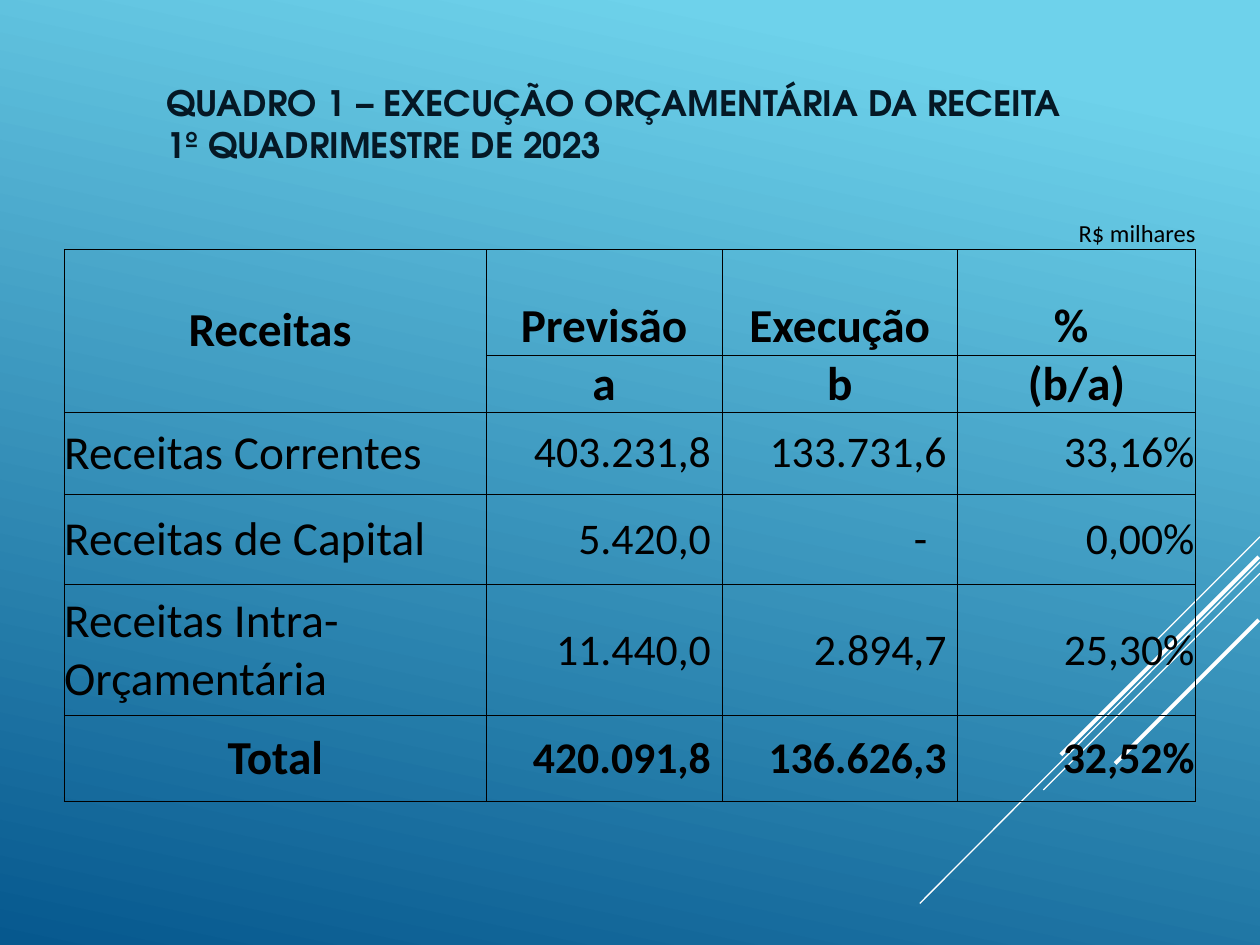
from dataclasses import dataclass

from lxml.etree import SubElement
from pptx import Presentation
from pptx.dml.color import RGBColor
from pptx.enum.shapes import MSO_CONNECTOR
from pptx.enum.text import MSO_ANCHOR, PP_ALIGN
from pptx.oxml import parse_xml
from pptx.oxml.ns import nsdecls, qn
from pptx.util import Inches, Pt


@dataclass(frozen=True)
class Theme:
    sky: str = "6ED2EB"
    deep: str = "06588E"
    title_ink: str = "051825"
    ink: str = "000000"
    streak: str = "FFFFFF"
    title_font: str = "TeX Gyre Adventor"
    body_font: str = "Calibri"
    title_size: float = 20
    unit_size: float = 14
    label_size: float = 27
    value_size: float = 25
    border_width: float = 0.5


def set_all(target, values):
    for name, value in values.items():
        setattr(target, name, value)


class SlideBuilder:
    def __init__(self, slide, theme):
        self.slide = slide
        self.theme = theme

    def background(self):
        fill = self.slide.background.fill
        fill.gradient()
        fill.gradient_angle = 360 - 102
        stops = ((0.1, self.theme.sky), (1, self.theme.deep))
        for stop, (position, color) in zip(fill.gradient_stops, stops):
            stop.position = position
            stop.color.rgb = RGBColor.from_string(color)

    def streak(self, start, end, width):
        line = self.slide.shapes.add_connector(
            MSO_CONNECTOR.STRAIGHT, *map(Inches, start + end))
        line.line.color.rgb = RGBColor.from_string(self.theme.streak)
        line.line.width = Pt(width)
        SubElement(line._element.spPr, qn("a:effectLst"))

    def styled_text(self, frame, text, size, font, color, bold=False,
                    align=PP_ALIGN.LEFT):
        frame.text = text
        for paragraph in frame.paragraphs:
            paragraph.alignment = align
            for run in paragraph.runs:
                set_all(run.font, {"name": font, "size": Pt(size), "bold": bold})
                run.font.color.rgb = RGBColor.from_string(color)

    def title(self, text, box):
        frame = self.slide.shapes.add_textbox(*map(Inches, box)).text_frame
        set_all(frame, {"word_wrap": True, "vertical_anchor": MSO_ANCHOR.MIDDLE})
        self.styled_text(frame, text, self.theme.title_size, self.theme.title_font,
                         self.theme.title_ink, bold=True)

    def table(self, left, top, widths, heights):
        table = self.slide.shapes.add_table(
            len(heights), len(widths),
            *map(Inches, (left, top, sum(widths), sum(heights)))).table
        set_all(table, {"first_row": False, "horz_banding": False})
        for column, width in zip(table.columns, widths):
            column.width = Inches(width)
        for row, height in zip(table.rows, heights):
            row.height = Inches(height)
        for index, row in enumerate(table.rows):
            for cell in row.cells:
                cell.fill.background()
                self.borders(cell, "B" if index == 0 else "LRTB")
        return table

    def borders(self, cell, drawn):
        """Line the sides named in drawn and clear the others."""
        for index, side in enumerate("LRTB"):
            paint = "<a:noFill/>"
            if side in drawn:
                paint = f'<a:solidFill><a:srgbClr val="{self.theme.ink}"/></a:solidFill>'
            cell._tc.get_or_add_tcPr().insert(index, parse_xml(
                f'<a:ln{side} {nsdecls("a")} w="{Pt(self.theme.border_width)}">'
                f"{paint}</a:ln{side}>"))

    def cell(self, cell, text, size, align, bold=False,
             anchor=MSO_ANCHOR.MIDDLE, right=0):
        set_all(cell, {"margin_left": 0, "margin_top": 0, "margin_bottom": 0,
                       "margin_right": Inches(right), "vertical_anchor": anchor})
        self.styled_text(cell.text_frame, text, size, self.theme.body_font,
                         self.theme.ink, bold, align)


STREAKS = [
    ((10, 4.26), (9.17, 5.09), 0.75),
    ((10, 4.46), (7.3, 7.17), 0.75),
    ((10, 4.55), (8.28, 6.27), 0.75),
    ((9.99, 4.42), (8.42, 5.99), 2.25),
    ((9.99, 4.92), (8.85, 6.06), 2.25),
]
COLUMN_WIDTHS = [3.35, 1.87, 1.87, 1.89]
ROW_HEIGHTS = [0.51, 0.84, 0.43, 0.65, 0.72, 1.04, 0.68]
HEADINGS = [("Previsão", "a"), ("Execução", "b"), ("% ", "(b/a)")]
REVENUES = [
    ("Receitas Correntes", "403.231,8 ", "133.731,6 ", "33,16%"),
    ("Receitas de Capital", "5.420,0 ", "-", "0,00%"),
    ("Receitas Intra-Orçamentária", "11.440,0 ", "2.894,7 ", "25,30%"),
    ("Total", "420.091,8 ", "136.626,3 ", "32,52%"),
]


def fill_revenue_table(builder, table):
    theme = builder.theme
    builder.cell(table.cell(0, 3), "R$ milhares", theme.unit_size,
                 PP_ALIGN.RIGHT, anchor=MSO_ANCHOR.BOTTOM)
    table.cell(1, 0).merge(table.cell(2, 0))
    builder.cell(table.cell(1, 0), "Receitas ", theme.label_size,
                 PP_ALIGN.CENTER, bold=True)
    for column, heading in enumerate(HEADINGS, start=1):
        for row, text in enumerate(heading, start=1):
            builder.cell(table.cell(row, column), text, theme.label_size,
                         PP_ALIGN.CENTER, bold=True, anchor=MSO_ANCHOR.BOTTOM)
    for row, (label, *values) in enumerate(REVENUES, start=3):
        is_total = label == "Total"
        builder.cell(table.cell(row, 0), label, theme.label_size,
                     PP_ALIGN.CENTER if is_total else PP_ALIGN.LEFT, is_total)
        for column, value in enumerate(values, start=1):
            builder.cell(table.cell(row, column), value, theme.value_size,
                         PP_ALIGN.RIGHT, is_total,
                         right=0.24 if value == "-" else 0.01)


def main():
    deck = Presentation()
    set_all(deck, {"slide_width": Inches(10), "slide_height": Inches(7.5)})
    builder = SlideBuilder(deck.slides.add_slide(deck.slide_layouts[6]), Theme())
    builder.background()
    for start, end, width in STREAKS:
        builder.streak(start, end, width)
    builder.title("QUADRO 1 – EXECUÇÃO ORÇAMENTÁRIA DA RECEITA\v"
                  "1º QUADRIMESTRE DE 2023", (1.22, 0.69, 8.5, 0.58))
    fill_revenue_table(builder, builder.table(0.51, 1.47, COLUMN_WIDTHS, ROW_HEIGHTS))
    deck.save("out.pptx")


if __name__ == "__main__":
    main()
